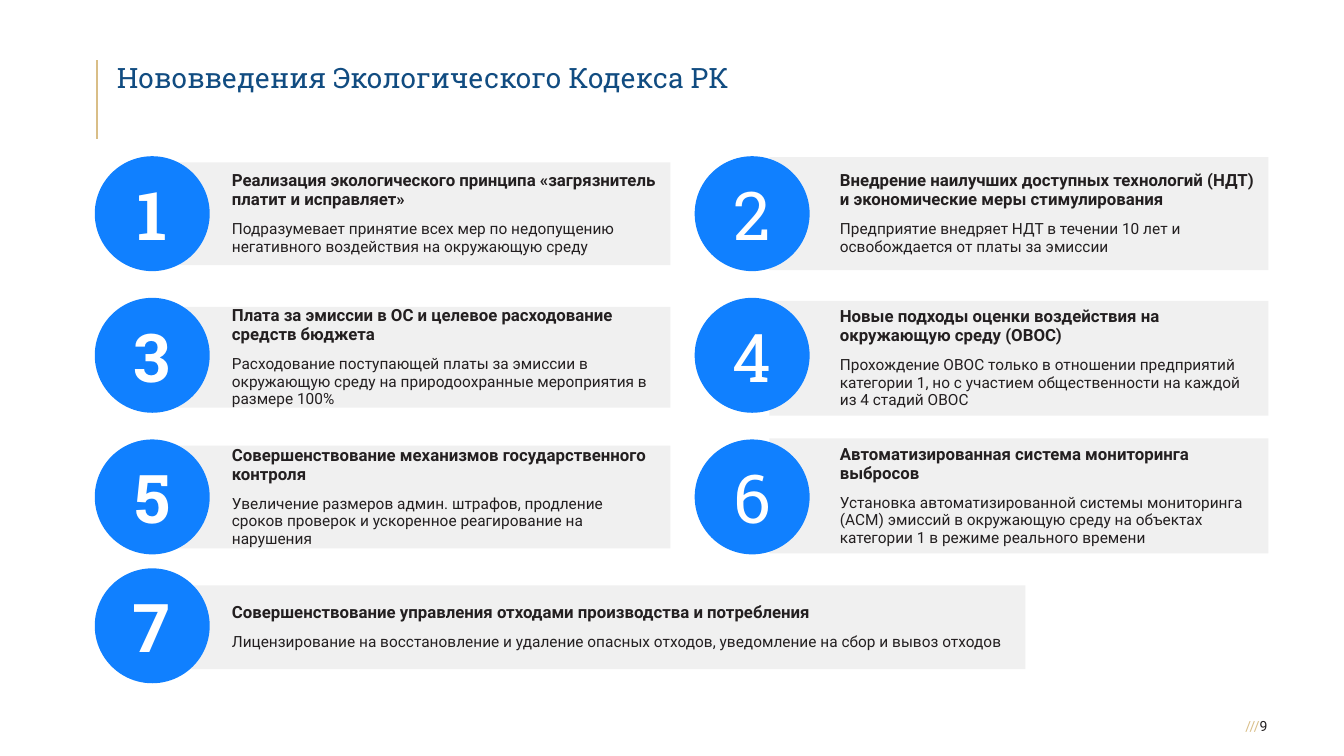
"""Builds the slide on the new rules of the ecological code."""
from dataclasses import dataclass
from typing import Any

from lxml.etree import SubElement
from pptx import Presentation
from pptx.dml.color import RGBColor
from pptx.enum.shapes import MSO_CONNECTOR, MSO_SHAPE
from pptx.enum.text import MSO_ANCHOR, PP_ALIGN
from pptx.oxml.ns import qn
from pptx.util import Inches, Pt


@dataclass(frozen=True)
class Theme:
    navy: str = "114C81"
    gold: str = "D9BE87"
    ink: str = "231F20"
    grey: str = "F0F0F0"
    blue: str = "1080FF"
    white: str = "FFFFFF"
    sans: str = "Roboto"
    slab: str = "Roboto Slab"
    title: int = 20
    head: int = 12
    body: int = 11
    digit: int = 48
    page: int = 10


@dataclass(frozen=True)
class Grid:
    step: int = Inches(0.1)
    wide: float = 133.3
    high: float = 75
    left: float = 9.4
    top: float = 15.5
    col: float = 59.5
    row: float = 14.05
    disc: float = 11.4

    def span(self, *units: float) -> list[int]:
        """Turn grid units into slide lengths."""
        return [round(unit * self.step) for unit in units]


@dataclass(frozen=True)
class Card:
    digit: str
    col: int
    row: float
    drop: float
    wide: float
    high: float
    head: str
    body: str
    face: str = "Roboto Slab"


THEME = Theme()
GRID = Grid()
INSET = (7.4, 8.0)
CARDS = [
    Card("1", 0, 0, 0.6, 50.5, 10.2,
         "Реализация экологического принципа «загрязнитель платит и исправляет»",
         "Подразумевает принятие всех мер по недопущению негативного воздействия на окружающую среду"),
    Card("3", 0, 1, 0.9, 50.5, 10,
         "Плата за эмиссии в ОС и целевое расходование средств бюджета",
         "Расходование поступающей платы за эмиссии в окружающую среду на природоохранные мероприятия в размере 100%"),
    Card("5", 0, 2, 0.6, 50.5, 10.2,
         "Совершенствование механизмов государственного контроля",
         "Увеличение размеров админ. штрафов, продление сроков проверок и ускоренное реагирование на нарушения"),
    Card("2", 1, 0, 0.1, 49.5, 11.2,
         "Внедрение наилучших доступных технологий (НДТ) и экономические меры стимулирования",
         "Предприятие внедряет НДТ в течении 10 лет и освобождается от платы за эмиссии"),
    Card("4", 1, 1, 0.3, 49.5, 11.4,
         "Новые подходы оценки воздействия на окружающую среду (ОВОС)",
         "Прохождение ОВОС только в отношении предприятий категории 1, но с участием общественности на каждой из 4 стадий ОВОС"),
    Card("6", 1, 2, -0.1, 49.5, 11.4,
         "Автоматизированная система мониторинга выбросов",
         "Установка автоматизированной системы мониторинга (АСМ) эмиссий в окружающую среду на объектах категории 1 в режиме реального времени"),
    Card("7", 0, 2.91, 1.7, 85.7, 8.3,
         "Совершенствование управления отходами производства и потребления",
         "Лицензирование на восстановление и удаление опасных отходов, уведомление на сбор и вывоз отходов",
         THEME.sans),
]


def apply(item: Any, **values: Any) -> None:
    """Set each named attribute on an item."""
    for name, value in values.items():
        setattr(item, name, value)


def frame(shape: Any, anchor: Any, *pads: float) -> Any:
    """Set wrap, anchor and insets, and return the text frame."""
    sides = ("margin_left", "margin_top", "margin_right", "margin_bottom")
    text = shape.text_frame
    apply(text, word_wrap=True, vertical_anchor=anchor,
          **dict(zip(sides, GRID.span(*pads))))
    return text


def write(par: Any, text: str, size: int, face: str, tint: str,
          bold: bool = False) -> None:
    """Add a formatted run to a paragraph."""
    run = par.add_run()
    run.text = text
    apply(run.font, size=Pt(size), name=face, bold=bold)
    run.font.color.rgb = RGBColor.from_string(tint)


def block(slide: Any, kind: Any, box: list[int], tint: str) -> Any:
    """Add a flat filled shape without outline."""
    shape = slide.shapes.add_shape(kind, *box)
    shape.shadow.inherit = False
    shape.fill.solid()
    shape.fill.fore_color.rgb = RGBColor.from_string(tint)
    shape.line.fill.background()
    return shape


def draw(slide: Any, card: Card) -> None:
    """Draw one card with its panel and numbered disc."""
    left = GRID.left + card.col * GRID.col
    top = GRID.top + card.row * GRID.row
    shift = INSET[card.col] - 0.8 * (1 - card.col) - 0.6 * card.col
    box = GRID.span(left + shift, top + card.drop, card.wide, card.high)
    panel = block(slide, MSO_SHAPE.RECTANGLE, box, THEME.grey)
    text = frame(panel, MSO_ANCHOR.MIDDLE, 7, 0.8, 1.2, 0.8)
    parts = ((text.paragraphs[0], card.head, THEME.head, True),
             (text.add_paragraph(), card.body, THEME.body, False))
    for par, words, size, bold in parts:
        apply(par, alignment=PP_ALIGN.LEFT, line_spacing=0.95, space_after=Pt(8))
        write(par, words, size, THEME.sans, THEME.ink, bold)

    disc = block(slide, MSO_SHAPE.OVAL,
                 GRID.span(left, top, GRID.disc, GRID.disc), THEME.blue)
    par = frame(disc, MSO_ANCHOR.MIDDLE, 1, 0.5, 1, 0.5).paragraphs[0]
    par.alignment = PP_ALIGN.CENTER
    write(par, card.digit, THEME.digit, card.face, THEME.white, card.col == 0)


def top(slide: Any) -> None:
    """Draw the title and the rule beside it."""
    rule = slide.shapes.add_connector(
        MSO_CONNECTOR.STRAIGHT, *GRID.span(9.6, 6, 9.6, 13.8))
    rule.line.color.rgb = RGBColor.from_string(THEME.gold)
    rule.line.width = Pt(1.5)
    SubElement(rule._element.spPr, qn("a:effectLst"))
    title = slide.shapes.title
    apply(title, **dict(zip(("left", "top", "width", "height"),
                            GRID.span(9.6, 6, 97.2, 7.8))))
    par = frame(title, MSO_ANCHOR.TOP, 2, 0, 0, 1.6).paragraphs[0]
    par.alignment = PP_ALIGN.LEFT
    write(par, "Нововведения Экологического Кодекса РК",
          THEME.title, THEME.slab, THEME.navy)


def foot(slide: Any) -> None:
    """Write the page number."""
    box = slide.shapes.add_textbox(*GRID.span(121.8, 70, 3.9, 4))
    par = frame(box, MSO_ANCHOR.MIDDLE, 0, 0, 0, 0).paragraphs[0]
    par.alignment = PP_ALIGN.RIGHT
    for text, tint in (("///", THEME.gold), ("9", THEME.ink)):
        write(par, text, THEME.page, THEME.sans, tint)


def main() -> None:
    """Build and save the deck."""
    deck = Presentation()
    deck.slide_width, deck.slide_height = GRID.span(GRID.wide, GRID.high)
    slide = deck.slides.add_slide(deck.slide_layouts[5])
    top(slide)
    foot(slide)
    for card in CARDS:
        draw(slide, card)
    deck.save("out.pptx")


if __name__ == "__main__":
    main()
